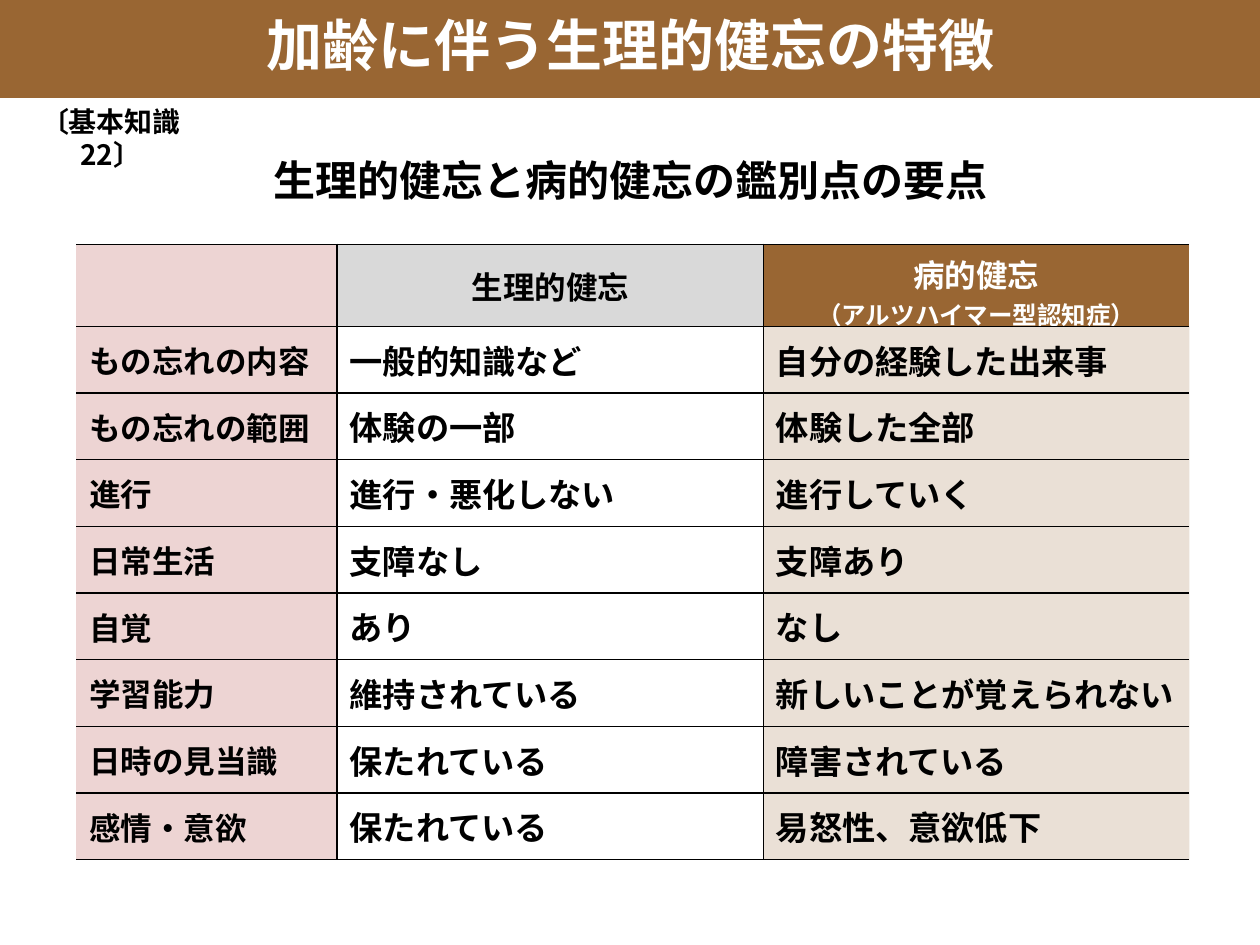
from dataclasses import dataclass

from lxml.etree import SubElement
from pptx import Presentation
from pptx.dml.color import RGBColor
from pptx.enum.shapes import MSO_SHAPE
from pptx.enum.text import MSO_ANCHOR, PP_ALIGN
from pptx.oxml.ns import qn
from pptx.util import Pt

FONT = "Noto Sans CJK JP"
BLACK = RGBColor(0x00, 0x00, 0x00)
WHITE = RGBColor(0xFF, 0xFF, 0xFF)
BROWN = RGBColor(0x99, 0x66, 0x33)
PINK = RGBColor(0xED, 0xD4, 0xD3)
GRAY = RGBColor(0xD9, 0xD9, 0xD9)

PAGE_WIDTH, PAGE_HEIGHT = 720, 540
BAND_HEIGHT = 56
TABLE_LEFT, TABLE_TOP = 43.7, 139.7
HEADER_HEIGHT, ROW_HEIGHT = 46.8, 38.1


@dataclass
class Column:
    width: float
    size: float
    header: str
    header_fill: RGBColor
    header_color: RGBColor
    body_fill: RGBColor | None
    opacity: int = 100


COLUMNS = [
    Column(149, 18, "", PINK, BLACK, PINK),
    Column(243.5, 19, "生理的健忘", GRAY, BLACK, None),
    Column(243.5, 19, "病的健忘\n（アルツハイマー型認知症）", BROWN, WHITE, BROWN, 20),
]
ROWS = [
    ("もの忘れの内容", "一般的知識など", "自分の経験した出来事"),
    ("もの忘れの範囲", "体験の一部", "体験した全部"),
    ("進行", "進行・悪化しない", "進行していく"),
    ("日常生活", "支障なし", "支障あり"),
    ("自覚", "あり", "なし"),
    ("学習能力", "維持されている", "新しいことが覚えられない"),
    ("日時の見当識", "保たれている", "障害されている"),
    ("感情・意欲", "保たれている", "易怒性、意欲低下"),
]


def format_para(para, size: float, color: RGBColor, align: PP_ALIGN) -> None:
    para.alignment = align
    for span in para.runs:
        span.font.size = Pt(size)
        span.font.bold = True
        span.font.color.rgb = color
        span.font.name = FONT
        SubElement(span.font._element, qn("a:ea"), typeface=FONT)


def set_text(box, text: str, size: float, color: RGBColor, wrap: bool, anchor: MSO_ANCHOR) -> None:
    frame = box.text_frame
    frame.text = text
    frame.word_wrap = wrap
    frame.vertical_anchor = anchor
    format_para(frame.paragraphs[0], size, color, PP_ALIGN.CENTER)


def add_text(page, left: float, top: float, width: float, height: float):
    return page.shapes.add_textbox(Pt(left), Pt(top), Pt(width), Pt(height))


def set_borders(cell, sides: str) -> None:
    """Draw a thin black line on each side named by L, R, T or B, and none elsewhere."""
    properties = cell._tc.get_or_add_tcPr()
    for side in "LRTB":
        line = SubElement(properties, qn(f"a:ln{side}"), w=str(Pt(1)))
        if side in sides:
            fill = SubElement(line, qn("a:solidFill"))
            SubElement(fill, qn("a:srgbClr"), val=str(BLACK))
        else:
            SubElement(line, qn("a:noFill"))


def set_fill(cell, color: RGBColor | None, opacity: int = 100) -> None:
    if color is None:
        cell.fill.background()
        return
    cell.fill.solid()
    cell.fill.fore_color.rgb = color
    if opacity < 100:
        shade = cell._tc.tcPr.find(f"{qn('a:solidFill')}/{qn('a:srgbClr')}")
        SubElement(shade, qn("a:alpha"), val=str(opacity * 1000))


def add_comparison_table(page) -> None:
    width = sum(column.width for column in COLUMNS)
    height = HEADER_HEIGHT + ROW_HEIGHT * len(ROWS)
    table = page.shapes.add_table(
        len(ROWS) + 1, len(COLUMNS), Pt(TABLE_LEFT), Pt(TABLE_TOP), Pt(width), Pt(height)
    ).table
    table.first_row = table.horz_banding = False
    for index, row in enumerate(table.rows):
        row.height = Pt(ROW_HEIGHT if index else HEADER_HEIGHT)

    for col, column in enumerate(COLUMNS):
        table.columns[col].width = Pt(column.width)
        sides = "TB" + ("L" if col > 0 else "") + ("R" if col < len(COLUMNS) - 1 else "")
        texts = [column.header] + [row[col] for row in ROWS]
        for index, text in enumerate(texts):
            cell = table.cell(index, col)
            cell.text_frame.text = text
            cell.vertical_anchor = MSO_ANCHOR.MIDDLE
            set_borders(cell, sides)
            if index:
                set_fill(cell, column.body_fill, column.opacity)
                format_para(cell.text_frame.paragraphs[0], column.size, BLACK, PP_ALIGN.LEFT)
            else:
                set_fill(cell, column.header_fill)
                for para, size in zip(cell.text_frame.paragraphs, (18, 14)):
                    format_para(para, size, column.header_color, PP_ALIGN.CENTER)


def main() -> None:
    deck = Presentation()
    deck.slide_width, deck.slide_height = Pt(PAGE_WIDTH), Pt(PAGE_HEIGHT)
    page = deck.slides.add_slide(deck.slide_layouts[5])

    band = page.shapes.add_shape(MSO_SHAPE.RECTANGLE, 0, 0, Pt(PAGE_WIDTH), Pt(BAND_HEIGHT))
    band.shadow.inherit = False
    band.fill.solid()
    band.fill.fore_color.rgb = BROWN
    band.line.fill.background()

    title = page.shapes.title
    title.element.addprevious(band.element)
    title.left, title.top, title.width, title.height = Pt(16.5), Pt(5), Pt(688), Pt(41)
    set_text(title, "加齢に伴う生理的健忘の特徴", 32, WHITE, False, MSO_ANCHOR.MIDDLE)

    subtitle = add_text(page, 16.5, 82, 688, 41)
    set_text(subtitle, "生理的健忘と病的健忘の鑑別点の要点", 24, BLACK, False, MSO_ANCHOR.MIDDLE)

    label = add_text(page, 0, BAND_HEIGHT, 126.7, 26.6)
    set_text(label, "〔基本知識22〕", 16, BLACK, True, MSO_ANCHOR.TOP)

    add_comparison_table(page)
    deck.save("out.pptx")


if __name__ == "__main__":
    main()
